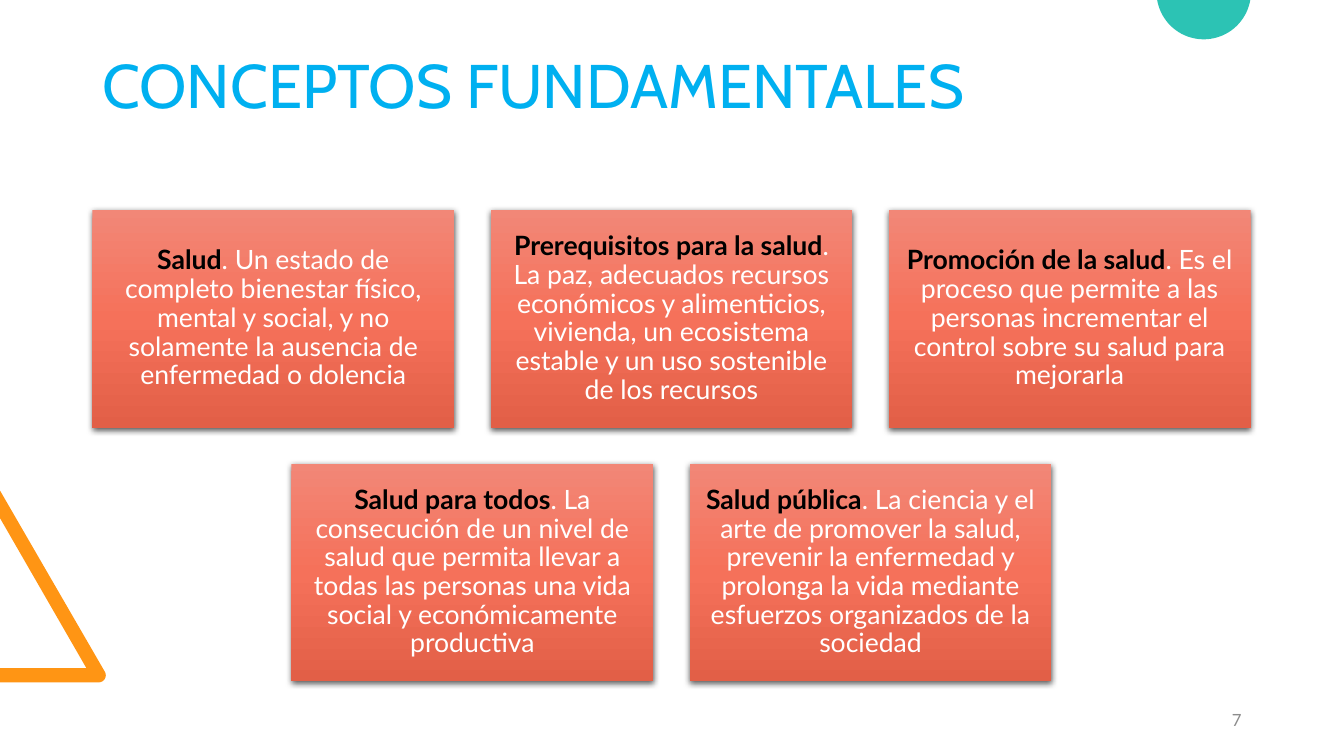
from math import asin, cos, degrees, radians, sin

from lxml import etree
from pptx import Presentation
from pptx.dml.color import RGBColor
from pptx.enum.shapes import MSO_SHAPE
from pptx.enum.text import MSO_ANCHOR, PP_ALIGN
from pptx.oxml.ns import qn
from pptx.util import Inches, Pt

RECTANGLE = MSO_SHAPE.RECTANGLE
MIDDLE = MSO_ANCHOR.MIDDLE
LEFT, CENTER, RIGHT = PP_ALIGN.LEFT, PP_ALIGN.CENTER, PP_ALIGN.RIGHT

COLORS = {
    "title": "00B0F0", "number": "8C8C8C", "term": "000000", "body": "FFFFFF",
    "orange": "FF9514", "teal": "2CC3B4",
    "card top": "F28777", "card middle": "F5715A", "card bottom": "E25F47",
}
COLUMNS, ROWS = 80, 45


def rgb(name):
    return RGBColor.from_string(COLORS[name])


def arc(center_x, center_y, radius, start, end, steps=40):
    """Points along an arc, angles in degrees clockwise from the right."""
    angles = [radians(start + (end - start) * i / steps) for i in range(steps + 1)]
    return [(center_x + radius * cos(a), center_y + radius * sin(a)) for a in angles]


class ConceptPage:
    """Places elements on a grid of 80 columns by 45 rows."""

    def __init__(self, deck):
        self.page = deck.slides.add_slide(deck.slide_layouts[6])
        self.column = deck.slide_width / COLUMNS
        self.row = deck.slide_height / ROWS

    def place(self, left, top, width, height):
        return (round(left * self.column), round(top * self.row),
                round(width * self.column), round(height * self.row))

    def outline(self, points, color):
        corners = [(round(x * self.column), round(y * self.row)) for x, y in points]
        builder = self.page.shapes.build_freeform(*corners[0], scale=1.0)
        builder.add_line_segments(corners[1:], close=True)
        shape = builder.convert_to_shape()
        shape.shadow.inherit = False
        shape.fill.solid()
        shape.fill.fore_color.rgb = rgb(color)
        shape.line.fill.background()

    def set_text(self, box, spans, size, font, align):
        """Fill a box with one paragraph of (text, color, bold) spans."""
        frame = box.text_frame
        frame.word_wrap = True
        frame.vertical_anchor = MIDDLE
        para = frame.paragraphs[0]
        para.alignment = align
        para.line_spacing = 0.9
        para.font.size = Pt(size)
        para.font.name = font
        for text, color, bold in spans:
            span = para.add_run()
            span.text = text
            span.font.bold = bold
            span.font.color.rgb = rgb(color)
        return frame

    def label(self, text, area, color, size, font, align):
        box = self.page.shapes.add_textbox(*self.place(*area))
        self.set_text(box, [(text, color, False)], size, font, align)

    def card(self, term, meaning, area):
        box = self.page.shapes.add_shape(RECTANGLE, *self.place(*area))
        box.line.fill.background()
        self.shade(box)
        self.cast_shadow(box)
        spans = [(term, "term", True), (meaning, "body", False)]
        frame = self.set_text(box, spans, 19, "Lato", CENTER)
        frame.margin_left = frame.margin_right = Inches(0.08)
        frame.margin_top = frame.margin_bottom = Inches(0.08)

    def shade(self, box):
        box.fill.gradient()
        box.fill.gradient_angle = 270
        stops = box._element.spPr.find(qn("a:gradFill")).find(qn("a:gsLst"))
        for stop in list(stops):
            stops.remove(stop)
        for position, name in ((0, "card top"), (50, "card middle"), (100, "card bottom")):
            stop = etree.SubElement(stops, qn("a:gs"), pos=str(position * 1000))
            etree.SubElement(stop, qn("a:srgbClr"), val=COLORS[name])

    def cast_shadow(self, box):
        box.shadow.inherit = False
        effects = box._element.spPr.find(qn("a:effectLst"))
        shadow = etree.SubElement(effects, qn("a:outerShdw"), blurRad=str(Pt(4.5)),
                                  dist=str(Pt(1.5)), dir="5400000", rotWithShape="0")
        color = etree.SubElement(shadow, qn("a:srgbClr"), val="000000")
        etree.SubElement(color, qn("a:alpha"), val="63000")


CONCEPTS = [
    [("Salud", ". Un estado de completo bienestar físico, mental y social, y no "
               "solamente la ausencia de enfermedad o dolencia"),
     ("Prerequisitos para la salud", ". La paz, adecuados recursos económicos y "
      "alimenticios, vivienda, un ecosistema estable y un uso sostenible de los recursos"),
     ("Promoción de la salud", ". Es el proceso que permite a las personas "
      "incrementar el control sobre su salud para mejorarla")],
    [("Salud para todos", ". La consecución de un nivel de salud que permita llevar a "
      "todas las personas una vida social y económicamente productiva"),
     ("Salud pública", ". La ciencia y el arte de promover la salud, prevenir la "
      "enfermedad y prolonga la vida mediante esfuerzos organizados de la sociedad")],
]
CARD_WIDTH, CARD_HEIGHT = 21.54, 12.96
STEP_X, STEP_Y = 23.7, 15.1
FIRST_LEFT, FIRST_TOP = 5.5, 12.5


def main():
    deck = Presentation()
    deck.slide_width, deck.slide_height = Inches(13.33), Inches(7.5)
    page = ConceptPage(deck)

    # Corner decorations, cut off by the slide's edges
    triangle = [(0, 40.62), (0, 39.78), (5.15, 39.78), (0, 30.84), (0, 29.2)]
    page.outline(triangle + arc(5.88, 40.2, 0.42, -30, 90), "orange")
    radius, center_y = 2.81, -0.47
    edge = degrees(asin(-center_y / radius))
    page.outline(arc(71.65, center_y, radius, edge, 180 - edge), "teal")

    # Title and page number
    page.label("CONCEPTOS FUNDAMENTALES", (5.5, 0.9, 69, 8.7), "title", 44, "Cabin", LEFT)
    page.label("7", (56.5, 41.7, 18, 2.4), "number", 12, "Lato", RIGHT)

    # Concept cards, each row centred under the first
    for line, concepts in enumerate(CONCEPTS):
        indent = (len(CONCEPTS[0]) - len(concepts)) * STEP_X / 2
        for place, (term, meaning) in enumerate(concepts):
            left = FIRST_LEFT + indent + place * STEP_X
            top = FIRST_TOP + line * STEP_Y
            page.card(term, meaning, (left, top, CARD_WIDTH, CARD_HEIGHT))

    deck.save("out.pptx")


if __name__ == "__main__":
    main()
